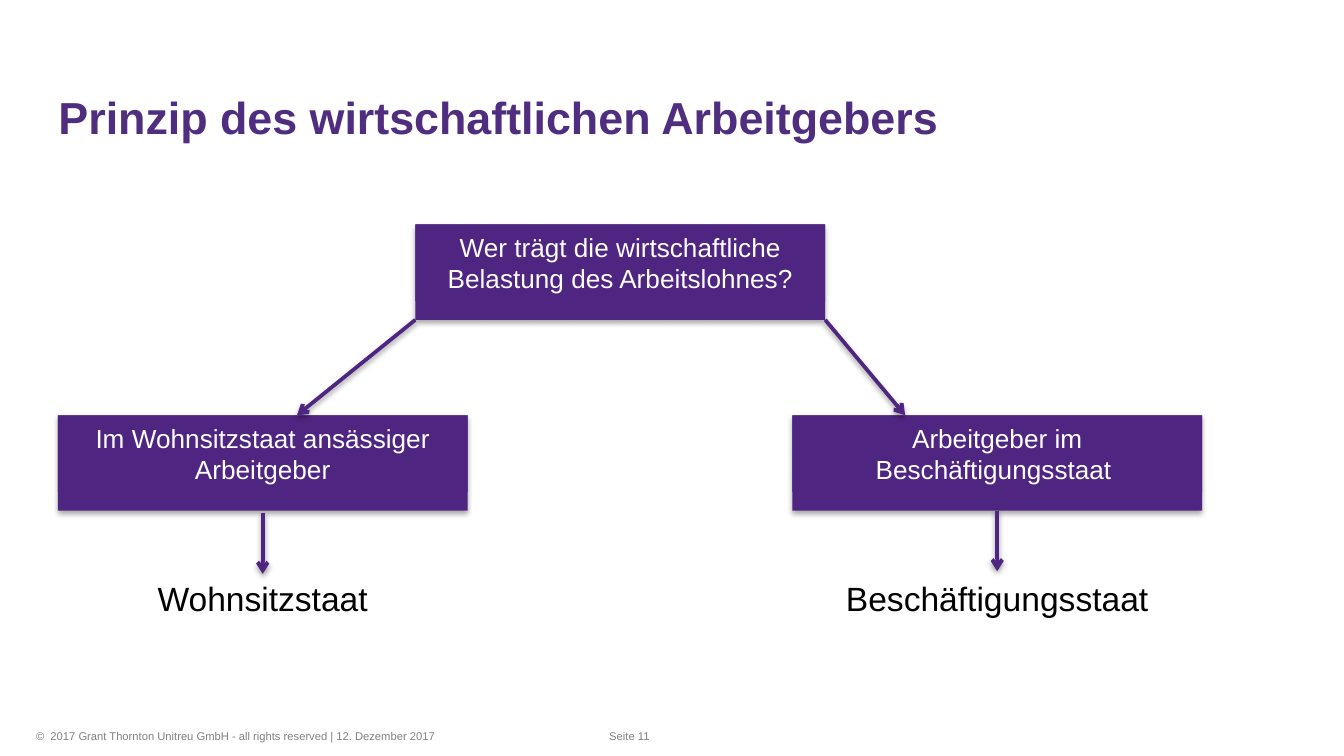
from dataclasses import dataclass

import pptx
import pptx.dml.color
import pptx.enum.shapes
import pptx.enum.text
import pptx.oxml
import pptx.oxml.ns
import pptx.util

PX = 4572  # 200 px to the inch
PURPLE = pptx.dml.color.RGBColor(0x4F, 0x25, 0x82)
TITLE_PURPLE = pptx.dml.color.RGBColor(0x4F, 0x2D, 0x7F)
WHITE = pptx.dml.color.RGBColor(0xFF, 0xFF, 0xFF)
BLACK = pptx.dml.color.RGBColor(0x00, 0x00, 0x00)
GREY = pptx.dml.color.RGBColor(0x80, 0x80, 0x80)
LEFT = pptx.enum.text.PP_ALIGN.LEFT
CENTER = pptx.enum.text.PP_ALIGN.CENTER
RECTANGLE = pptx.enum.shapes.MSO_SHAPE.RECTANGLE

BOX_W, BOX_H, BOX_TEXT_H = 610, 142, 114
TOP_X, LEFT_X, RIGHT_X = 618, 86, 1179
TOP_Y = 334
LOWER_Y = TOP_Y + 2 * BOX_H
LABEL_Y = 850
ARROW_H = 90


@dataclass(frozen=True)
class Box:
    text: str
    x: int
    y: int


@dataclass(frozen=True)
class Arrow:
    x1: int
    y1: int
    x2: int
    y2: int


@dataclass(frozen=True)
class Label:
    text: str
    x: int
    y: int
    w: int
    h: int
    size: int
    color: pptx.dml.color.RGBColor
    align: pptx.enum.text.PP_ALIGN


BOXES = [
    Box("Wer trägt die wirtschaftliche Belastung des Arbeitslohnes?", TOP_X, TOP_Y),
    Box("Im Wohnsitzstaat ansässiger Arbeitgeber", LEFT_X, LOWER_Y),
    Box("Arbeitgeber im Beschäftigungsstaat ", RIGHT_X, LOWER_Y),
]
ARROWS = [
    Arrow(TOP_X, TOP_Y + BOX_H, 442, LOWER_Y),
    Arrow(TOP_X + BOX_W, TOP_Y + BOX_H, 1347, LOWER_Y),
    Arrow(391, 764, 391, 764 + ARROW_H),
    Arrow(1484, 760, 1484, 760 + ARROW_H),
]
LABELS = [
    Label("Wohnsitzstaat", LEFT_X, LABEL_Y, BOX_W, 80, 18, BLACK, CENTER),
    Label("Beschäftigungsstaat", RIGHT_X, LABEL_Y, BOX_W, 80, 18, BLACK, CENTER),
    Label("©  2017 Grant Thornton Unitreu GmbH - all rights reserved | 12. Dezember 2017",
          34, 1076, 1328, 40, 6, GREY, LEFT),
    Label("Seite 11", 887, 1076, 168, 40, 6, GREY, LEFT),
]


def px(*values: int) -> list[int]:
    return [v * PX for v in values]


def write(sp, text: str, size: int, color, align, bold: bool = False) -> None:
    tf = sp.text_frame
    tf.word_wrap = True
    p = tf.paragraphs[0]
    p.text = text
    p.alignment = align
    p.font.name = "Arial"
    p.font.size = pptx.util.Pt(size)
    p.font.bold = bold
    p.font.color.rgb = color


def add_shadow(sp, alpha: int, distance: float) -> None:
    """Put a soft downward shadow on a shape whose line is already set."""
    sp.element.spPr.append(pptx.oxml.parse_xml(
        f'<a:effectLst {pptx.oxml.ns.nsdecls("a")}>'
        f'<a:outerShdw blurRad="{pptx.util.Pt(3.1)}" dist="{pptx.util.Pt(distance)}" '
        'dir="5400000" rotWithShape="0"><a:srgbClr val="000000">'
        f'<a:alpha val="{alpha * 1000}"/></a:srgbClr></a:outerShdw></a:effectLst>'))


def add_box(slide, box: Box) -> None:
    """Group a shadowed plate with the shorter text panel at its top."""
    group = slide.shapes.add_group_shape()
    plate, panel = (
        group.shapes.add_shape(RECTANGLE, *px(box.x, box.y, BOX_W, h))
        for h in (BOX_H, BOX_TEXT_H))
    for sp in (plate, panel):
        sp.fill.solid()
        sp.fill.fore_color.rgb = PURPLE
        sp.line.fill.background()
    add_shadow(plate, 35, 1.8)
    panel.shadow.inherit = False
    panel.text_frame.vertical_anchor = pptx.enum.text.MSO_ANCHOR.TOP
    write(panel, box.text, 14, WHITE, CENTER)


def add_arrow(slide, arrow: Arrow) -> None:
    line = slide.shapes.add_connector(
        pptx.enum.shapes.MSO_CONNECTOR.STRAIGHT,
        *px(arrow.x1, arrow.y1, arrow.x2, arrow.y2))
    line.line.color.rgb = PURPLE
    line.line.width = pptx.util.Pt(2)
    line.element.spPr.find(pptx.oxml.ns.qn("a:ln")).append(pptx.oxml.parse_xml(
        f'<a:tailEnd {pptx.oxml.ns.nsdecls("a")} type="arrow"/>'))
    add_shadow(line, 38, 1.6)


def add_label(slide, label: Label) -> None:
    sp = slide.shapes.add_textbox(*px(label.x, label.y, label.w, label.h))
    write(sp, label.text, label.size, label.color, label.align)


def add_title(slide, text: str) -> None:
    title = slide.shapes.title
    title.left, title.top, title.width, title.height = px(67, 40, 1640, 184)
    title.text_frame.auto_size = pptx.enum.text.MSO_AUTO_SIZE.NONE
    title.text_frame.vertical_anchor = pptx.enum.text.MSO_ANCHOR.BOTTOM
    write(title, text, 24, TITLE_PURPLE, LEFT, bold=True)


def main() -> None:
    prs = pptx.Presentation()
    prs.slide_width, prs.slide_height = px(2000, 1125)
    slide = prs.slides.add_slide(prs.slide_layouts.get_by_name("Title Only"))
    add_title(slide, "Prinzip des wirtschaftlichen Arbeitgebers")
    for box in BOXES:
        add_box(slide, box)
    for arrow in ARROWS:
        add_arrow(slide, arrow)
    for label in LABELS:
        add_label(slide, label)
    prs.save("out.pptx")


if __name__ == "__main__":
    main()
